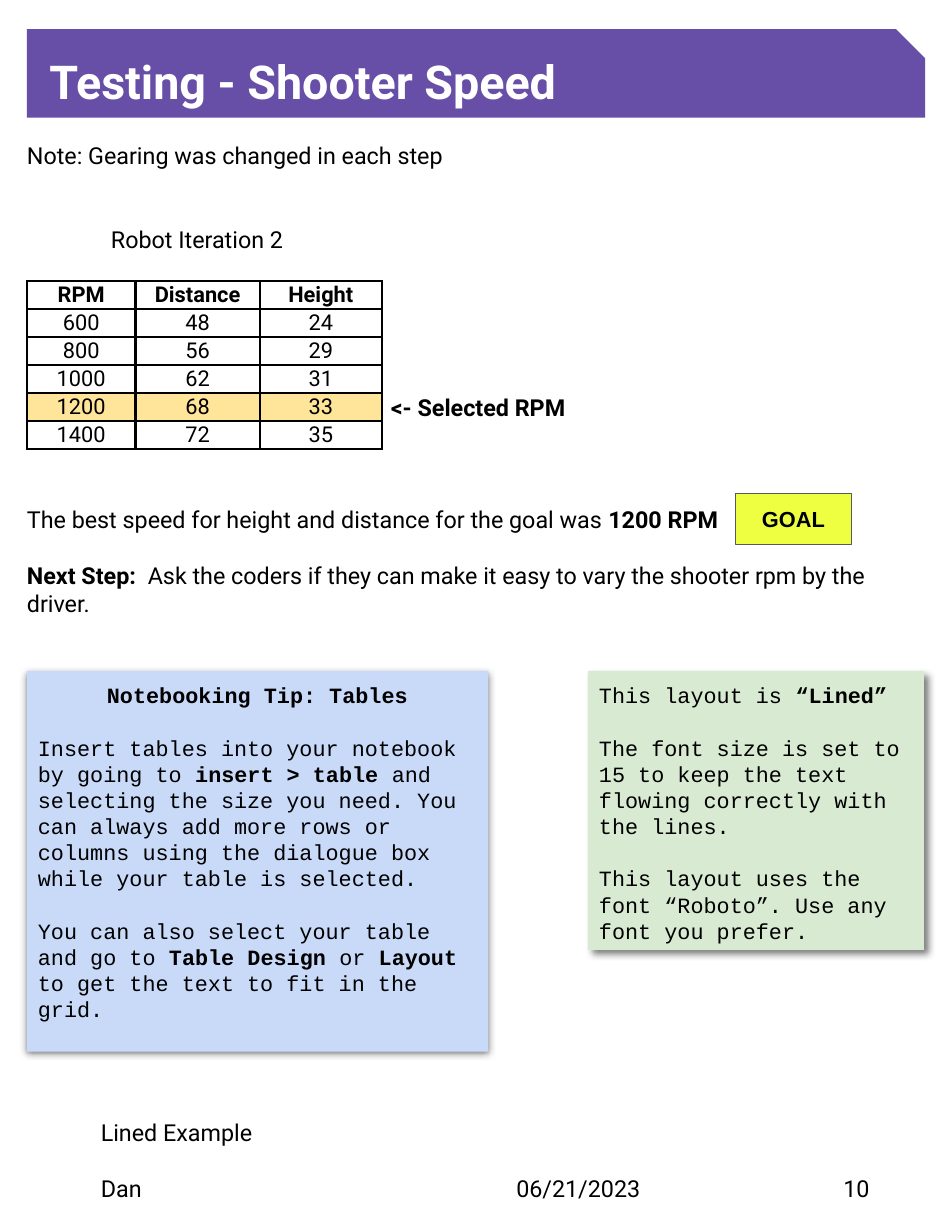
from lxml import etree
from pptx import Presentation
from pptx.dml.color import RGBColor
from pptx.enum import shapes, text
from pptx.oxml import parse_xml
from pptx.oxml.ns import nsdecls
from pptx.util import Inches, Pt

BLACK = RGBColor(0, 0, 0)
WHITE = RGBColor(255, 255, 255)
PURPLE = RGBColor(0x67, 0x4E, 0xA7)
BLUE = RGBColor(0xC9, 0xDA, 0xF8)
GREEN = RGBColor(0xD9, 0xEA, 0xD3)
YELLOW = RGBColor(0xEE, 0xFF, 0x41)
AMBER = RGBColor(0xFF, 0xE5, 0x99)
GRAY = RGBColor(0x59, 0x59, 0x59)
LEFT, MIDDLE, TOP = text.PP_ALIGN.LEFT, text.MSO_ANCHOR.MIDDLE, text.MSO_ANCHOR.TOP
CENTER = text.PP_ALIGN.CENTER


def write(tf, lines, font, size, color=BLACK, inset=(0, 0, 0, 0), anchor=TOP, pitch=None):
    tf.word_wrap = True
    tf.auto_size = text.MSO_AUTO_SIZE.NONE
    tf.vertical_anchor = anchor
    tf.margin_left, tf.margin_top, tf.margin_right, tf.margin_bottom = map(Inches, inset)
    for i, (words, align, before, indent) in enumerate(lines):
        p = tf.add_paragraph() if i else tf.paragraphs[0]
        p.alignment = align
        p.space_before = Pt(before)
        if pitch:
            p.line_spacing = Pt(pitch)
        if indent:
            p._p.get_or_add_pPr().set("marL", str(Inches(indent)))
        p.font.name, p.font.size, p.font.color.rgb = font, Pt(size), color
        parts = words.split("**")
        p.font.bold = parts[0] == "" and parts[-1] == ""
        for j, part in enumerate(parts):
            if part:
                r = p.add_run()
                r.text = part
                if not p.font.bold:
                    r.font.bold = j % 2 == 1


def add_box(kind, box, fill, line=None):
    sp = s.shapes.add_shape(kind, *map(Inches, box))
    sp.shadow.inherit = False
    sp.fill.solid()
    sp.fill.fore_color.rgb = fill
    if line:
        sp.line.color.rgb = line
        sp.line.width = Pt(0.75)
    else:
        sp.line.fill.background()
    return sp


prs = Presentation()
prs.slide_width, prs.slide_height = Inches(8.5), Inches(11)
s = prs.slides.add_slide(prs.slide_layouts[5])

title = s.shapes.title
title.left, title.top, title.width, title.height = map(Inches, (0.9, 9.98, 7.34, 0.23))
write(title.text_frame, [("Lined Example", LEFT, 0, 0)], "Roboto", 15)

for words, left, width in (("Dan", 0.9, 3.51), ("06/21/2023", 4.61, 2.4), ("10", 7.53, 0.74)):
    tb = s.shapes.add_textbox(Inches(left), Inches(10.48), Inches(width), Inches(0.23))
    write(tb.text_frame, [(words, LEFT, 0, 0)], "Roboto", 15)

body = [
    ("Note: Gearing was changed in each step", LEFT, 0, 0),
    ("Robot Iteration 2", LEFT, 36, 0.75),
    ("**<- Selected RPM**", LEFT, 90, 3.25),
    ("The best speed for height and distance for the goal was **1200 RPM**", LEFT, 54, 0),
    ("**Next Step:  **Ask the coders if they can make it easy to vary the shooter rpm "
     "by the driver.", LEFT, 18, 0),
]
tb = s.shapes.add_textbox(Inches(0.24), Inches(1.26), Inches(8.02), Inches(8.33))
write(tb.text_frame, body, "Roboto", 15, pitch=18)

layout_note = [
    ("This layout is **“Lined”**", LEFT, 0, 0),
    ("The font size is set to 15 to keep the text flowing correctly with the lines.",
     LEFT, 16.8, 0),
    ("This layout uses the font “Roboto”. Use any font you prefer.", LEFT, 16.8, 0),
]
table_tip = [
    ("**Notebooking Tip: Tables**", CENTER, 0, 0),
    ("Insert tables into your notebook by going to **insert > table** and selecting the "
     "size you need. You can always add more rows or columns using the dialogue box "
     "while your table is selected.", LEFT, 16.8, 0),
    ("You can also select your table and go to **Table Design** or **Layout **to get "
     "the text to fit in the grid.", LEFT, 16.8, 0),
]
for box, fill, lines, dist, angle in (
    ((5.25, 5.99, 3, 2.49), GREEN, layout_note, 3.8, 46),
    ((0.24, 5.99, 4.12, 3.4), BLUE, table_tip, 1.5, 90),
):
    sp = add_box(shapes.MSO_SHAPE.RECTANGLE, box, fill)
    write(sp.text_frame, lines, "Courier New", 14, inset=(0.1,) * 4, pitch=16.8)
    effects = sp._element.spPr.find("{*}effectLst")
    effects.append(parse_xml(
        f'<a:outerShdw {nsdecls("a")} blurRad="{Pt(4.5)}" dist="{Pt(dist)}" '
        f'dir="{angle * 60000}" algn="bl" rotWithShape="0"><a:srgbClr val="000000">'
        '<a:alpha val="50000"/></a:srgbClr></a:outerShdw>'))

rows = [
    ("RPM", "Distance", "Height"),
    ("600", "48", "24"),
    ("800", "56", "29"),
    ("1000", "62", "31"),
    ("1200", "68", "33"),
    ("1400", "72", "35"),
]
table = s.shapes.add_table(len(rows), 3, Inches(0.24), Inches(2.51),
                           Inches(3.17), Inches(1.5)).table
for col, width in zip(table.columns, (0.97, 1.11, 1.09)):
    col.width = Inches(width)
for i, row in enumerate(rows):
    table.rows[i].height = Inches(0.25)
    for j, value in enumerate(row):
        cell = table.cell(i, j)
        cell.vertical_anchor = MIDDLE
        cell.margin_left = cell.margin_right = Inches(0.1)
        cell.margin_top = cell.margin_bottom = 0
        p = cell.text_frame.paragraphs[0]
        p.text = value
        p.alignment = CENTER
        p.font.name, p.font.size, p.font.color.rgb = "Roboto", Pt(14), BLACK
        p.font.bold = p.runs[0].font.bold = i == 0
        tcPr = cell._tc.get_or_add_tcPr()
        for side in "LRTB":
            tcPr.append(etree.fromstring(
                f'<a:ln{side} {nsdecls("a")} w="{Pt(1.5)}"><a:solidFill>'
                f'<a:srgbClr val="{BLACK}"/></a:solidFill></a:ln{side}>'))
        if row[0] == "1200":
            cell.fill.solid()
            cell.fill.fore_color.rgb = AMBER
        else:
            cell.fill.background()

goal = add_box(shapes.MSO_SHAPE.RECTANGLE, (6.57, 4.41, 1.03, 0.45), YELLOW, GRAY)
write(goal.text_frame, [("**GOAL**", CENTER, 0, 0)], "Arial", 14, inset=(0.1,) * 4, anchor=MIDDLE)

banner = add_box(shapes.MSO_SHAPE.SNIP_1_RECTANGLE, (0.24, 0.26, 8.02, 0.79), PURPLE)
banner.adjustments[0] = 0.33
write(banner.text_frame, [("**Testing - Shooter Speed**", LEFT, 0, 0)], "Roboto", 30, WHITE,
      inset=(0.2, 0, 0.1, 0), anchor=MIDDLE)

prs.save("out.pptx")
